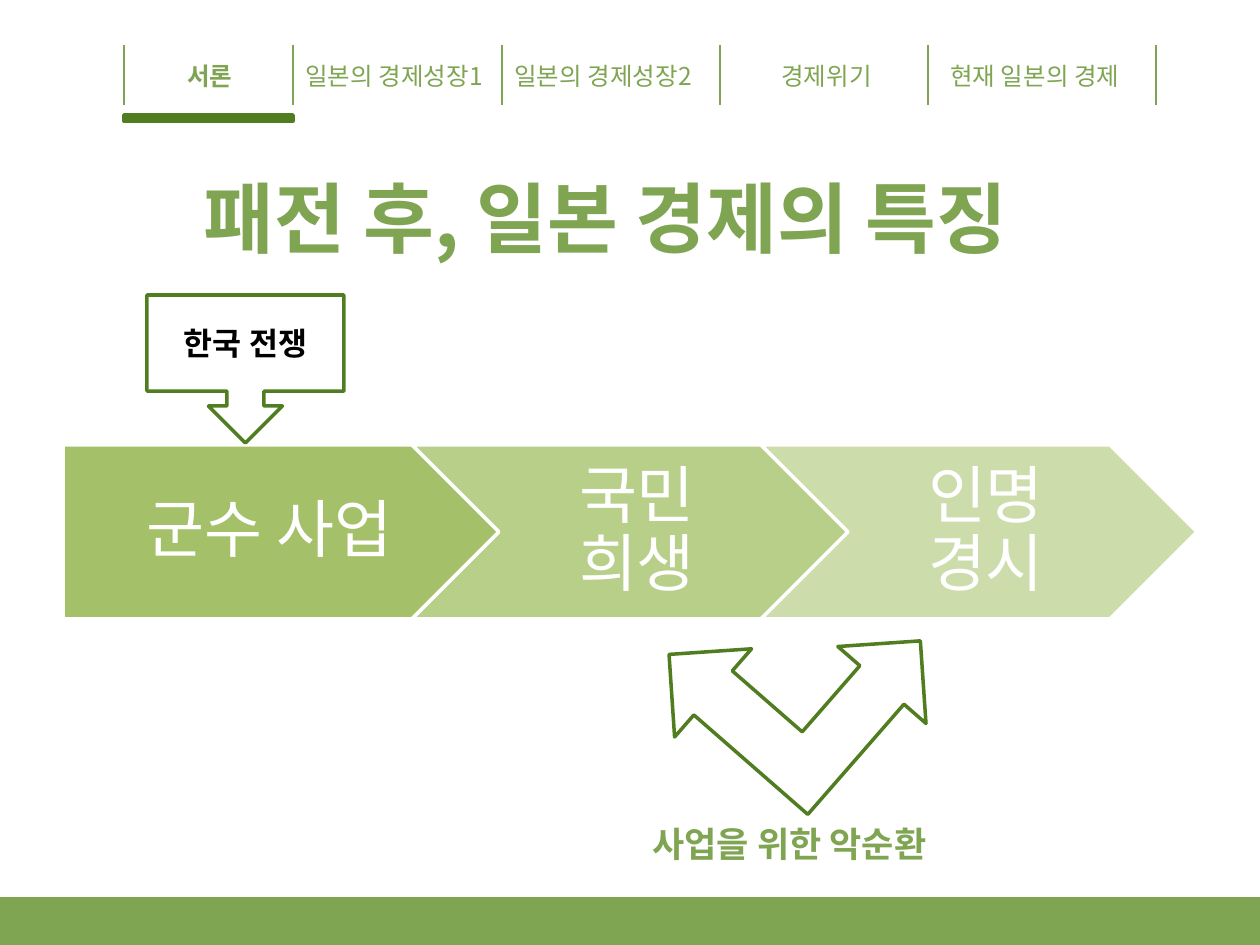
from lxml.etree import SubElement
from pptx import Presentation
from pptx.dml.color import RGBColor
from pptx.enum.shapes import MSO_CONNECTOR as Connector, MSO_SHAPE as Shape
from pptx.enum.text import MSO_ANCHOR as Anchor, MSO_AUTO_SIZE as AutoSize, PP_ALIGN as Align
from pptx.oxml.ns import qn
from pptx.util import Pt

FONT = "Noto Sans CJK KR"
GREEN = RGBColor(0x7F, 0xA4, 0x52)
DARK_GREEN = RGBColor(0x51, 0x7D, 0x21)
STEP_GREEN = RGBColor(0x9B, 0xBB, 0x59)
WHITE = RGBColor(0xFF, 0xFF, 0xFF)
BLACK = RGBColor(0, 0, 0)

EMU_PER_PX = 914400 / 126


def px(length):
    return round(length * EMU_PER_PX)


def add_span(para, text, size, color, bold=False):
    span = para.add_run()
    span.text = text
    span.font.size = Pt(size)
    span.font.bold = bold
    span.font.color.rgb = color
    span.font.name = FONT
    SubElement(span.font._element, qn("a:ea"), typeface=FONT)
    return span


def add_box(page, kind, box, fill, line, alpha=None):
    shape = page.shapes.add_shape(kind, *map(px, box))
    shape.shadow.inherit = False
    shape.fill.solid()
    shape.fill.fore_color.rgb = fill
    shape.line.color.rgb = line
    shape.line.width = Pt(2)
    if alpha is not None:
        color = shape._element.spPr.find(qn("a:solidFill"))[0]
        SubElement(color, qn("a:alpha"), val=str(alpha * 1000))
    return shape


def add_label(page, box, text, size, color, bold=False):
    """One line of text that grows with its content."""
    frame = page.shapes.add_textbox(*map(px, box)).text_frame
    frame.word_wrap = False
    frame.auto_size = AutoSize.SHAPE_TO_FIT_TEXT
    add_span(frame.paragraphs[0], text, size, color, bold)


def add_centered(page, box, text, size, color, bold=False, insets=(13, 6, 13, 6)):
    """Wrapped text in the middle of its box."""
    frame = page.shapes.add_textbox(*map(px, box)).text_frame
    frame.word_wrap = True
    frame.vertical_anchor = Anchor.MIDDLE
    (frame.margin_left, frame.margin_top,
     frame.margin_right, frame.margin_bottom) = map(px, insets)
    para = frame.paragraphs[0]
    para.alignment = Align.CENTER
    return para, add_span(para, text, size, color, bold)


def add_navigation(page, left, top):
    # Dividers between the tabs
    for offset in (0, 169, 378, 596, 804, 1032):
        x = px(left + offset)
        divider = page.shapes.add_connector(
            Connector.STRAIGHT, x, px(top), x, px(top + 60))
        divider.line.color.rgb = GREEN
        divider.line.width = Pt(0.75)
        SubElement(divider._element.spPr, qn("a:effectLst"))
    # Tab names, the current one in bold
    tabs = [(51, 74, "서론"), (169, 222, "일본의 경제성장1"),
            (378, 222, "일본의 경제성장2"), (645, 125, "경제위기"),
            (814, 215, "현재 일본의 경제")]
    for number, (offset, width, name) in enumerate(tabs):
        add_label(page, (left + offset, top + 10, width, 42), name, 14, GREEN, number == 0)
    # Marker under the current tab
    add_box(page, Shape.RECTANGLE, (left, top + 70, 169, 6), DARK_GREEN, DARK_GREEN)


def add_title(page, box):
    _, span = add_centered(page, box, "패전 후, 일본 경제의 특징", 44, GREEN, True)
    # White outline, which has to come first among the run's properties
    properties = span.font._element
    outline = SubElement(properties, qn("a:ln"), w=str(Pt(1.4)))
    SubElement(SubElement(outline, qn("a:solidFill")), qn("a:srgbClr"), val=str(WHITE))
    properties.insert(0, outline)


def add_process(page, left, top):
    width, height, pitch, notch = 436, 174, 349, 87
    steps = [("군수 사업", 90), ("국민 희생", 70), ("인명 경시", 50)]
    for number, (name, alpha) in enumerate(steps):
        x = left + number * pitch
        first = number == 0
        kind = Shape.PENTAGON if first else Shape.CHEVRON
        add_box(page, kind, (x, top, width, height), STEP_GREEN, WHITE, alpha)
        indent = 0 if first else notch
        text_width = width - notch // 2 if first else width - 2 * notch
        para, _ = add_centered(
            page, (x + indent, top, text_width, height), name, 36, WHITE,
            insets=(26 if first else 20, 13, 6, 13))
        para.line_spacing = 0.9


def add_callout(page, box):
    callout = add_box(page, Shape.DOWN_ARROW_CALLOUT, box, WHITE, DARK_GREEN)
    frame = callout.text_frame
    frame.vertical_anchor = Anchor.MIDDLE
    para = frame.paragraphs[0]
    para.alignment = Align.CENTER
    add_span(para, "한국 전쟁", 18, BLACK, True)


def add_cycle(page, left, top):
    arrow = add_box(page, Shape.LEFT_UP_ARROW, (left + 38, top, 239, 234), WHITE, DARK_GREEN)
    arrow.rotation = 41.1
    add_label(page, (left, top + 244, 333, 55), "사업을 위한 악순환", 20, GREEN, True)


def main():
    deck = Presentation()
    deck.slide_width, deck.slide_height = px(1260), px(945)
    page = deck.slides.add_slide(deck.slide_layouts[6])
    # Footer band
    add_box(page, Shape.RECTANGLE, (0, 899, 1260, 46), GREEN, GREEN)
    add_navigation(page, 124, 45)
    add_title(page, (39, 138, 1134, 157))
    add_process(page, 63, 445)
    add_callout(page, (147, 295, 197, 148))
    add_cycle(page, 640, 572)
    deck.save("out.pptx")


if __name__ == "__main__":
    main()
